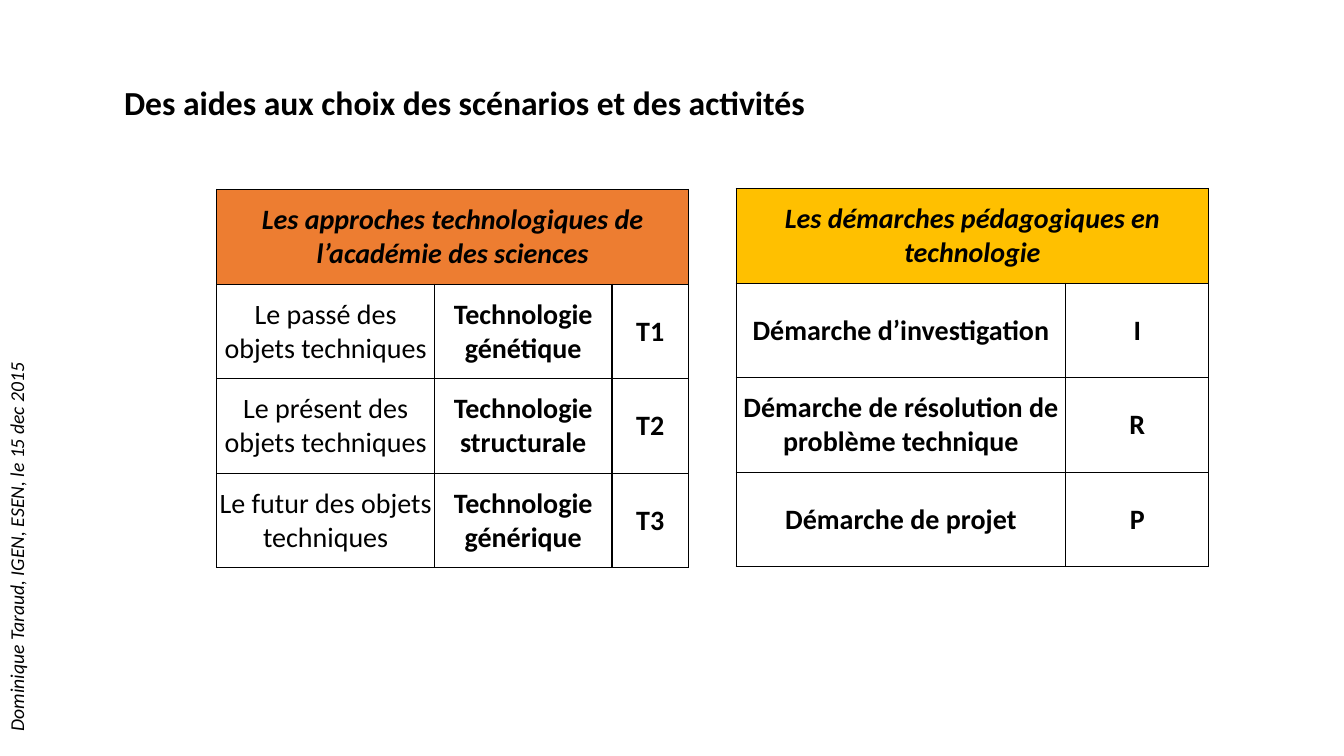
from lxml.etree import SubElement
from pptx import Presentation
from pptx.dml.color import RGBColor
from pptx.enum.text import MSO_ANCHOR, PP_ALIGN
from pptx.oxml.ns import qn
from pptx.util import Inches, Pt

BLACK = RGBColor(0x00, 0x00, 0x00)
ORANGE = RGBColor(0xED, 0x7D, 0x31)
GOLD = RGBColor(0xFF, 0xC0, 0x00)

APPROACHES = [
    ["Les approches technologiques de l’académie des sciences"],
    ["Le passé des objets techniques", "Technologie génétique", "T1"],
    ["Le présent des objets techniques", "Technologie structurale", "T2"],
    ["Le futur des objets techniques", "Technologie générique", "T3"],
]
METHODS = [
    ["Les démarches pédagogiques en technologie"],
    ["Démarche d’investigation", "I"],
    ["Démarche de résolution de problème technique", "R"],
    ["Démarche de projet", "P"],
]


def write(tf, text, align, **style):
    p = tf.paragraphs[0]
    p.alignment = align
    r = p.add_run()
    r.text = text
    r.font.color.rgb = BLACK
    for name, value in {"name": "Calibri", **style}.items():
        setattr(r.font, name, value)


def set_borders(cell, widths):
    tcPr = cell._tc.get_or_add_tcPr()
    for side, width in zip("LRTB", widths):
        ln = SubElement(tcPr, qn(f"a:ln{side}"), w=str(Pt(width)))
        fill = SubElement(ln, qn("a:solidFill"))
        SubElement(fill, qn("a:srgbClr"), val=str(BLACK))


def add_title(s, left, top, width, height):
    title = s.shapes.title
    box = {"left": left, "top": top, "width": width, "height": height}
    for name, value in box.items():
        setattr(title, name, Inches(value))
    tf = title.text_frame
    tf.word_wrap = True
    tf.vertical_anchor = MSO_ANCHOR.TOP
    write(tf, "Des aides aux choix des scénarios et des activités", PP_ALIGN.LEFT,
          size=Pt(24), bold=True)
    tf.paragraphs[0].line_spacing = 1.0


def add_credit(s, left, top, width, height):
    tb = s.shapes.add_textbox(*map(Inches, (left, top, width, height)))
    tb.rotation = 270
    tb.text_frame.word_wrap = True
    write(tb.text_frame, "Dominique Taraud, IGEN, ESEN, le 15 dec 2015", PP_ALIGN.LEFT,
          size=Pt(14), italic=True)


def add_grid(s, left, top, widths, height, rows, color, outer_left, plain_cols=()):
    last_row, last_col = len(rows) - 1, len(widths) - 1
    box = map(Inches, (left, top, sum(widths), height))
    table = s.shapes.add_table(len(rows), len(widths), *box).table
    table.first_row = table.horz_banding = False
    for col, width in zip(table.columns, widths):
        col.width = Inches(width)
    table.cell(0, 0).merge(table.cell(0, last_col))
    for i, texts in enumerate(rows):
        header = i == 0
        for j in range(len(widths)):
            cell = table.cell(i, j)
            set_borders(cell, (
                outer_left if j == 0 else 1 if j == last_col else 0.5,
                1 if header or j >= last_col - 1 else 0.5,
                1 if header else 0.5,
                1 if i == last_row else 0.5,
            ))
            if header:
                cell.fill.solid()
                cell.fill.fore_color.rgb = color
            else:
                cell.fill.background()
            cell.vertical_anchor = MSO_ANCHOR.MIDDLE
            for side in ("left", "right", "top"):
                setattr(cell, f"margin_{side}", Inches(0.01))
            cell.margin_bottom = 0
            if j < len(texts):
                write(cell.text_frame, texts[j], PP_ALIGN.CENTER, size=Pt(20),
                      bold=header or j not in plain_cols, italic=header)


def main():
    prs = Presentation()
    prs.slide_width, prs.slide_height = Inches(13.33), Inches(7.5)
    s = prs.slides.add_slide(prs.slide_layouts[5])
    add_credit(s, -2.47, 4.55, 5.27, 0.34)
    add_title(s, 1.13, 0.76, 11.76, 0.5)
    add_grid(s, 2.15, 1.88, (2.16, 1.76, 0.76), 3.75, APPROACHES, ORANGE, 1, plain_cols=(0,))
    add_grid(s, 7.3, 1.87, (3.27, 1.42), 3.75, METHODS, GOLD, 0.5)
    prs.save("out.pptx")


if __name__ == "__main__":
    main()
